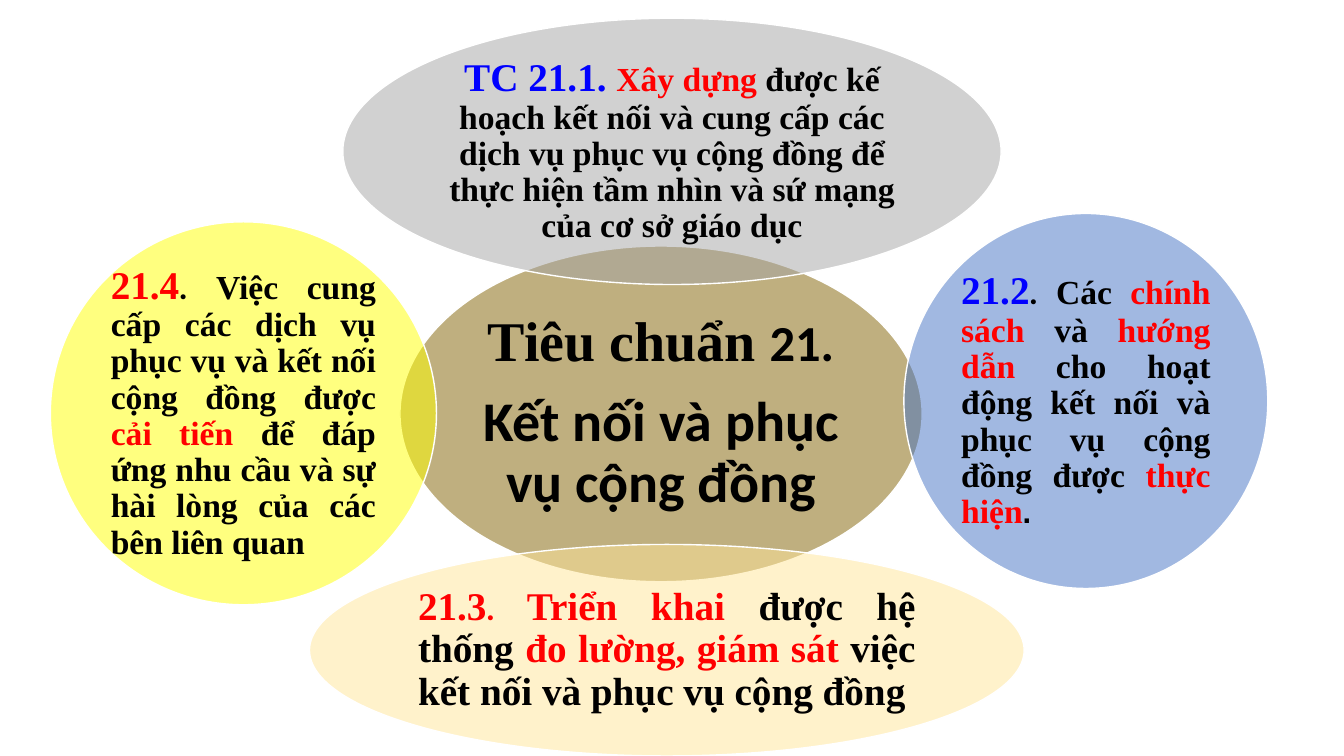
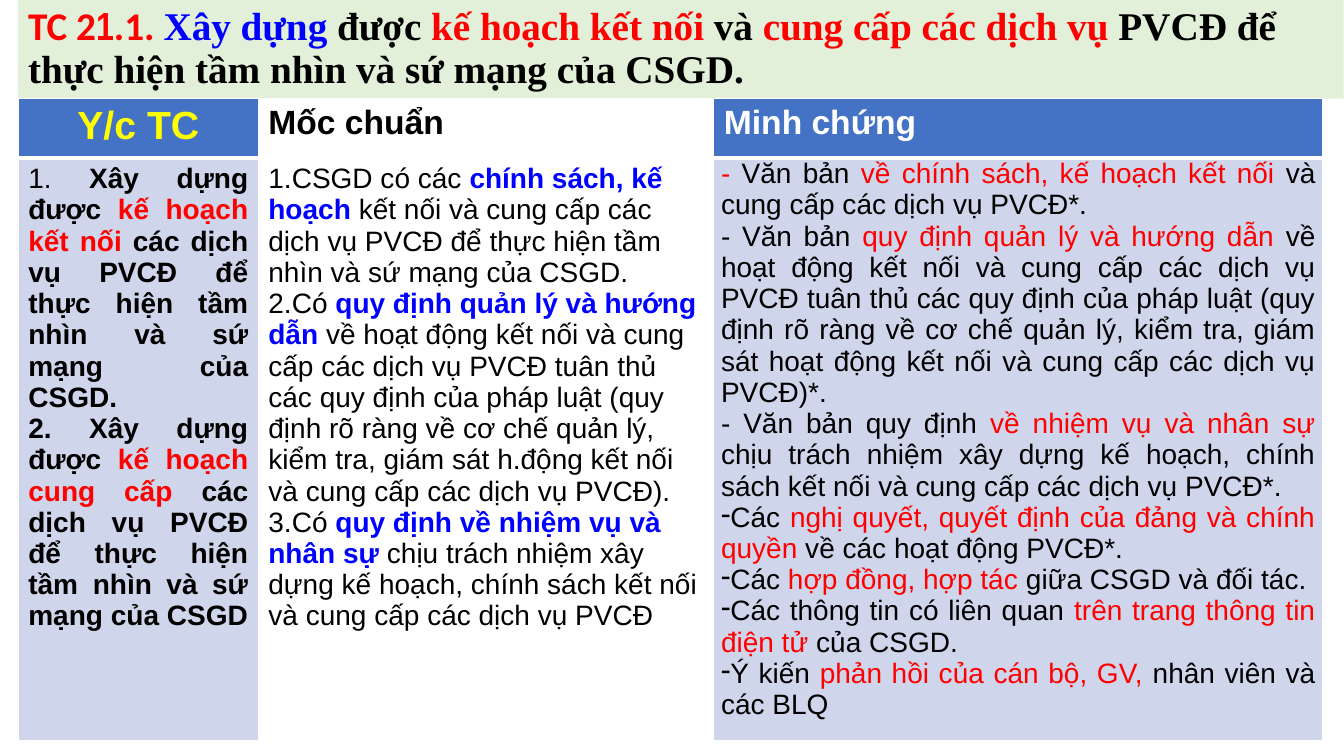
from lxml import etree
from pptx import Presentation
from pptx.dml.color import RGBColor
from pptx.enum import shapes, text
from pptx.oxml.ns import qn
from pptx.util import Cm, Pt

COLOURS = {
    "black": "000000", "white": "FFFFFF", "red": "FF0000", "blue": "0000FF",
    "yellow": "FFFF00", "olive": "806000", "grey": "A5A5A5", "azure": "4472C4",
    "cream": "FFE699", "mint": "E2F0D9", "lavender": "CFD5EA",
}
ALIGN = {"left": text.PP_ALIGN.LEFT, "center": text.PP_ALIGN.CENTER,
         "justify": text.PP_ALIGN.JUSTIFY}
SERIF = {"name": "Times New Roman", "bold": True}
HEADING = {"name": "Arial", "size": 24, "bold": True}
BODY = {"name": "Arial", "size": 20, "bold": False}
CALIBRI = {"name": "Calibri"}
LARGE = {"size": 28}
BOLD = {"bold": True}
PLAIN = {"bold": False}
POINT = {"name": "Calibri", "italic": True}
NUMBER = ("buAutoNum", "type", "arabicPeriod")
DASH = ("buChar", "char", "-")

ELLIPSES = [
    {"box": (10.08, 6.2, 13.16, 8.46), "fill": "olive", "align": "center",
     "size": 40, "inset": 0.15, "paragraphs": [
         [("Tiêu chuẩn ", "black"), ("21. ", "black", {"name": "Calibri", "size": 36})],
         [("Kết nối và phục vụ cộng đồng", "black", CALIBRI)]]},
    {"box": (8.64, 0.46, 16.59, 6.71), "fill": "grey", "align": "center",
     "size": 24, "inset": 0.1, "paragraphs": [
         [("TC 21.1. ", "blue", LARGE), ("Xây dựng ", "red"),
          ("được kế hoạch kết nối và cung cấp các dịch vụ phục vụ cộng đồng "
           "để thực hiện tầm nhìn và sứ mạng của cơ sở giáo dục", "black")]]},
    {"box": (22.78, 5.38, 9.17, 9.45), "fill": "azure", "align": "justify",
     "size": 24, "inset": 0.1, "paragraphs": [
         [("21.2", "blue", LARGE), (". ", "black", POINT), ("Các ", "black"),
          ("chính sách ", "red"), ("và ", "black"), ("hướng dẫn ", "red"),
          ("cho hoạt động kết nối và phục vụ cộng đồng được ", "black"),
          ("thực hiện", "red"), (".", "black", {"name": "Arial", "size": 22})]]},
    {"box": (7.8, 13.72, 18.01, 5.33), "fill": "cream", "align": "justify",
     "size": 28, "inset": 0.1, "paragraphs": [
         [("21.3", "red"), (". ", "red", {**POINT, "size": 24}),
          ("Triển khai ", "red"), ("được hệ thống ", "black"),
          ("đo lường, giám sát ", "red"),
          ("việc kết nối và phục vụ cộng đồng", "black")]]},
    {"box": (1.27, 5.59, 9.73, 9.65), "fill": "yellow", "align": "justify",
     "size": 24, "inset": 0.1, "paragraphs": [
         [("21.4", "red", LARGE), (". ", "black", POINT),
          ("Việc cung cấp các dịch vụ phục vụ và kết nối cộng đồng được ", "black"),
          ("cải tiến", "red"),
          (" để đáp ứng nhu cầu và sự hài lòng của các bên liên quan", "black")]]},
]

TITLE_BOX = (0.46, 0, 33.4, 2.49)
TITLE = [
    ("TC 2", "red", CALIBRI), ("1", "red", {"name": "Arial Narrow"}),
    (".1. ", "red", CALIBRI), ("Xây dựng ", "blue"), ("được ", "black"),
    ("kế hoạch kết nối ", "red"), ("và", "black"), (" cung cấp các dịch vụ ", "red"),
    ("PVCĐ để thực hiện tầm nhìn và sứ mạng của CSGD.", "black"),
]

COLUMN_WIDTHS = (6.05, 11.48, 15.34)
ROW_HEIGHTS = (1.5, 14.68)
HEADERS = [
    {"fill": "azure", "align": "center", "paragraphs": [(None, [("Y/c TC", "yellow", LARGE)])]},
    {"fill": "white", "align": "left", "paragraphs": [(None, [("Mốc chuẩn", "black")])]},
    {"fill": "azure", "align": "left", "paragraphs": [(None, [("Minh chứng", "white")])]},
]
REQUIREMENTS = [
    (None, [("1. ", "black"), ("Xây dựng được ", "black", BOLD),
            ("kế hoạch kết nối ", "red", BOLD),
            ("các dịch vụ PVCĐ để thực hiện tầm nhìn và sứ mạng của CSGD.", "black", BOLD)]),
    (None, [("2. Xây dựng được ", "black", BOLD), ("kế hoạch cung cấp ", "red", BOLD),
            ("các dịch vụ PVCĐ để thực hiện tầm nhìn và sứ mạng của CSGD", "black", BOLD)]),
]
BENCHMARKS = [
    (NUMBER, [("CSGD có các ", "black"), ("chính sách, kế hoạch ", "blue", BOLD),
              ("kết nối và cung cấp các dịch vụ PVCĐ để thực hiện tầm nhìn "
               "và sứ mạng của CSGD.", "black")]),
    (NUMBER, [("Có ", "black"), ("quy định quản lý và hướng dẫn ", "blue", BOLD),
              ("về hoạt động kết nối và cung cấp các dịch vụ PVCĐ tuân thủ các quy định "
               "của pháp luật (quy định rõ ràng về cơ chế quản lý, kiểm tra, giám sát "
               "h.động kết nối và cung cấp các dịch vụ PVCĐ).", "black")]),
    (NUMBER, [("Có ", "black"), ("quy định về nhiệm vụ và nhân sự ", "blue", BOLD),
              ("chịu trách nhiệm xây dựng kế hoạch, chính sách kết nối "
               "và cung cấp các dịch vụ PVCĐ", "black")]),
]
EVIDENCE = [
    (None, [("- ", "red"), ("Văn bản ", "black"),
            ("về chính sách, kế hoạch kết nối ", "red"),
            ("và cung cấp các dịch vụ PVCĐ*.", "black")]),
    (None, [("- Văn bản ", "black"), ("quy định quản lý và hướng dẫn ", "red"),
            ("về hoạt động kết nối và cung cấp các dịch vụ PVCĐ tuân thủ các quy định "
             "của pháp luật (quy định rõ ràng về cơ chế quản lý, kiểm tra, giám sát "
             "hoạt động kết nối và cung cấp các dịch vụ PVCĐ)*.", "black")]),
    (None, [("- Văn bản quy định ", "black"), ("về nhiệm vụ và nhân sự ", "red"),
            ("chịu trách nhiệm xây dựng kế hoạch, chính sách kết nối "
             "và cung cấp các dịch vụ PVCĐ*.", "black")]),
    (DASH, [("Các ", "black"), ("nghị quyết, quyết định của đảng và chính quyền ", "red"),
            ("về các hoạt động PVCĐ*.", "black")]),
    (DASH, [("Các ", "black"), ("hợp đồng, hợp tác ", "red"),
            ("giữa CSGD và đối tác.", "black")]),
    (DASH, [("Các thông tin có liên quan ", "black"),
            ("trên trang thông tin điện tử ", "red"), ("của CSGD.", "black")]),
    (DASH, [("Ý kiến ", "black"), ("phản hồi của cán bộ, GV, ", "red"),
            ("nhân viên và các BLQ", "black")]),
]
DETAILS = [
    {"fill": "lavender", "align": "justify", "paragraphs": REQUIREMENTS},
    {"fill": "white", "align": "left", "paragraphs": BENCHMARKS},
    {"fill": "lavender", "align": "justify", "paragraphs": EVIDENCE,
     "margins": {"margin_left": Cm(0.18), "margin_right": Cm(0.18),
                 "margin_top": 0, "margin_bottom": 0}},
]


def colour(name):
    return RGBColor.from_string(COLOURS[name])


def set_attributes(target, values):
    for name, value in values.items():
        setattr(target, name, value)


def write_runs(paragraph, runs, base):
    for content, colour_name, *extra in runs:
        run = paragraph.add_run()
        run.text = content
        values = {**base, **(extra[0] if extra else {})}
        values["size"] = Pt(values["size"])
        set_attributes(run.font, values)
        run.font.color.rgb = colour(colour_name)


def write_paragraphs(frame, paragraphs, base, layout):
    for index, (bullet, runs) in enumerate(paragraphs):
        paragraph = frame.paragraphs[0] if index == 0 else frame.add_paragraph()
        set_attributes(paragraph, layout)
        if bullet:
            tag, key, value = bullet
            properties = paragraph._p.get_or_add_pPr()
            set_marker = {"marL": "0", "indent": "0"}
            for name, amount in set_marker.items():
                properties.set(name, amount)
            etree.SubElement(properties, qn("a:" + tag)).set(key, value)
        write_runs(paragraph, runs, base)


def add_filled_shape(slide, kind, box, fill):
    shape = slide.shapes.add_shape(kind, *map(Cm, box))
    shape.shadow.inherit = False
    shape.fill.solid()
    shape.fill.fore_color.rgb = colour(fill)
    set_attributes(shape.text_frame, {
        "word_wrap": True, "vertical_anchor": text.MSO_ANCHOR.MIDDLE})
    return shape


def add_ellipse(slide, ellipse):
    shape = add_filled_shape(slide, shapes.MSO_SHAPE.OVAL, ellipse["box"], ellipse["fill"])
    fill_colour = shape._element.spPr.find(qn("a:solidFill"))[0]
    etree.SubElement(fill_colour, qn("a:alpha")).set("val", "50000")
    shape.line.color.rgb = colour("white")
    shape.line.width = Pt(1)
    sides = ("left", "top", "right", "bottom")
    set_attributes(shape.text_frame, {"margin_" + side: Cm(ellipse["inset"]) for side in sides})
    write_paragraphs(
        shape.text_frame, [(None, runs) for runs in ellipse["paragraphs"]],
        {**SERIF, "size": ellipse["size"]},
        {"alignment": ALIGN[ellipse["align"]], "line_spacing": 0.9,
         "space_after": Pt(0.35 * ellipse["size"])})


def add_title(slide):
    shape = add_filled_shape(slide, shapes.MSO_SHAPE.RECTANGLE, TITLE_BOX, "mint")
    shape.line.fill.background()
    write_paragraphs(shape.text_frame, [(None, TITLE)], {**SERIF, **LARGE},
                     {"alignment": ALIGN["left"], "line_spacing": 0.9})


def add_borders(cell, widths):
    properties = cell._tc.get_or_add_tcPr()
    for side, width in zip("LRTB", widths):
        line = etree.SubElement(properties, qn("a:ln" + side), w=str(Pt(width)))
        fill = etree.SubElement(line, qn("a:solidFill"))
        etree.SubElement(fill, qn("a:srgbClr"), val=COLOURS["white"])


def add_criteria_table(slide):
    left, top, _, height = TITLE_BOX
    table = slide.shapes.add_table(
        len(ROW_HEIGHTS), len(COLUMN_WIDTHS), Cm(left), Cm(top + height),
        Cm(sum(COLUMN_WIDTHS)), Cm(sum(ROW_HEIGHTS))).table
    for column, width in zip(table.columns, COLUMN_WIDTHS):
        column.width = Cm(width)
    for row, row_height in zip(table.rows, ROW_HEIGHTS):
        row.height = Cm(row_height)
    rows = [(HEADERS, HEADING, (1, 1, 1, 3)), (DETAILS, BODY, (1, 1, 3, 1))]
    for row, (contents, base, borders) in zip(table.rows, rows):
        for cell, content in zip(row.cells, contents):
            set_attributes(cell, content.get("margins", {}))
            add_borders(cell, borders)
            cell.fill.solid()
            cell.fill.fore_color.rgb = colour(content["fill"])
            write_paragraphs(cell.text_frame, content["paragraphs"], base,
                             {"alignment": ALIGN[content["align"]]})


def main():
    presentation = Presentation()
    set_attributes(presentation, {"slide_width": Cm(33.87), "slide_height": Cm(19.05)})
    blank = presentation.slide_layouts[6]
    overview = presentation.slides.add_slide(blank)
    for ellipse in ELLIPSES:
        add_ellipse(overview, ellipse)
    criteria = presentation.slides.add_slide(blank)
    add_title(criteria)
    add_criteria_table(criteria)
    presentation.save("out.pptx")


if __name__ == "__main__":
    main()
